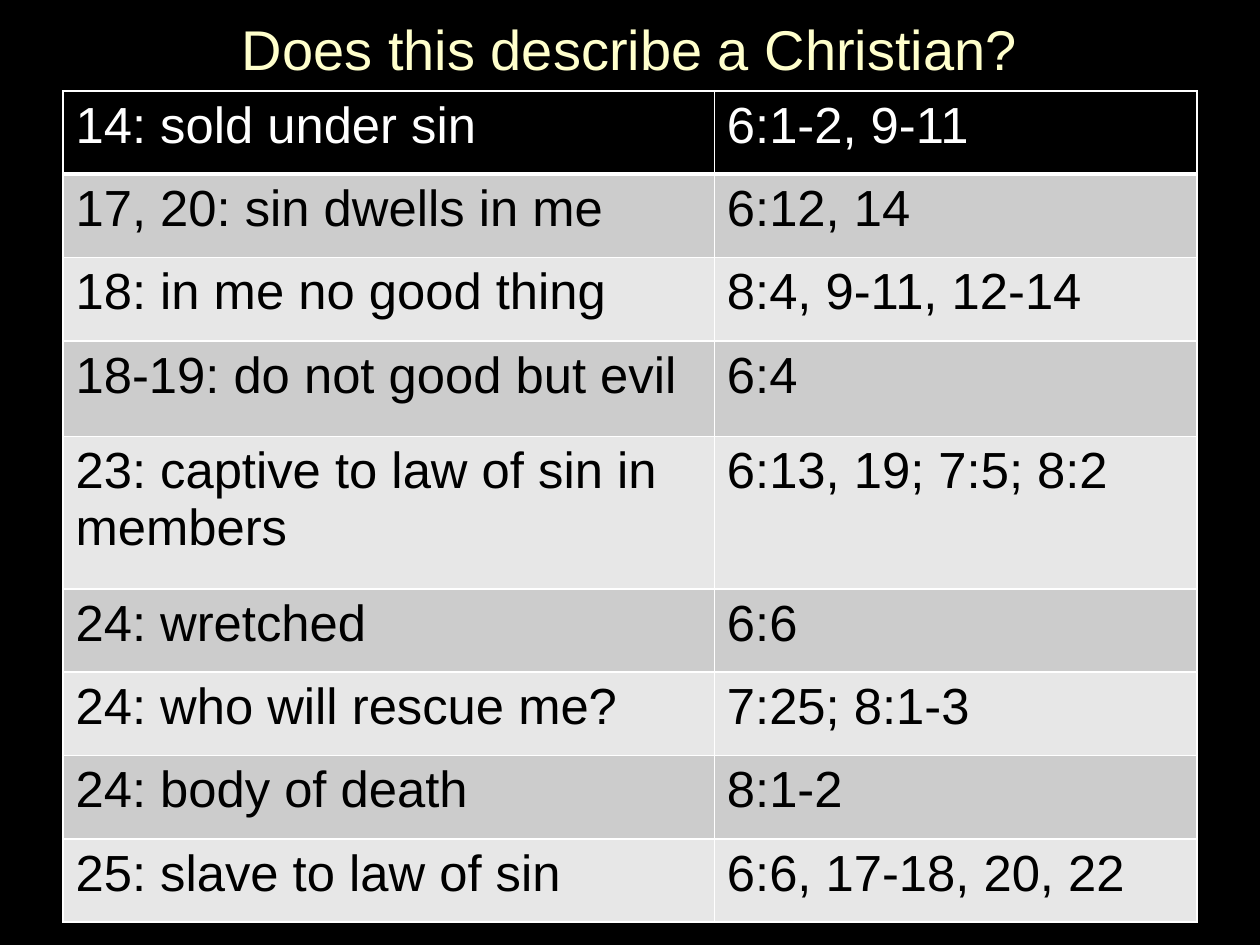
from dataclasses import dataclass
from typing import Any

import pptx
import pptx.dml.color
import pptx.enum.shapes
import pptx.enum.text
import pptx.oxml
import pptx.oxml.ns
import pptx.util

Cm = pptx.util.Cm
Pt = pptx.util.Pt


@dataclass(frozen=True)
class Theme:
    font: str = "Arial"
    title_size: float = 32
    cell_size: float = 29
    background: str = "000000"
    title: str = "FFFFCC"
    header_text: str = "FFFFFF"
    body_text: str = "000000"
    bands: tuple[str, str] = ("CCCCCC", "E7E7E7")
    border: str = "FFFFFF"
    thin: float = 1
    thick: float = 3


@dataclass(frozen=True)
class VerseRow:
    description: str
    references: str
    height: float = 1.68


THEME = Theme()
TITLE = "Does this describe a Christian?"
COLUMN_WIDTHS = (13.13, 9.73)
ROWS = (
    VerseRow("14: sold under sin", "6:1-2, 9-11"),
    VerseRow("17, 20: sin dwells in me", "6:12, 14"),
    VerseRow("18: in me no good thing", "8:4, 9-11, 12-14"),
    VerseRow("18-19: do not good but evil", "6:4", 1.93),
    VerseRow("23: captive to law of sin in members", "6:13, 19; 7:5; 8:2", 3.07),
    VerseRow("24: wretched", "6:6"),
    VerseRow("24: who will rescue me?", "7:25; 8:1-3"),
    VerseRow("24: body of death", "8:1-2"),
    VerseRow("25: slave to law of sin", "6:6, 17-18, 20, 22"),
)


def rgb(code: str) -> pptx.dml.color.RGBColor:
    return pptx.dml.color.RGBColor.from_string(code)


def set_solid(fill: Any, color: str) -> None:
    fill.solid()
    fill.fore_color.rgb = rgb(color)


def write(para: Any, text: str, size: float, color: str) -> None:
    span = para.add_run()
    span.text = text
    for name, value in {"name": THEME.font, "size": Pt(size), "bold": False}.items():
        setattr(span.font, name, value)
    span.font.color.rgb = rgb(color)


def set_borders(cell: Any, top: float, bottom: float) -> None:
    """Draw all four cell edges; the schema wants them ahead of the fill."""
    properties = cell._tc.get_or_add_tcPr()
    widths = {"lnL": THEME.thin, "lnR": THEME.thin, "lnT": top, "lnB": bottom}
    for position, (edge, width) in enumerate(widths.items()):
        line = pptx.oxml.parse_xml(
            f'<a:{edge} {pptx.oxml.ns.nsdecls("a")} w="{Pt(width)}">'
            f'<a:solidFill><a:srgbClr val="{THEME.border}"/></a:solidFill></a:{edge}>'
        )
        properties.insert(position, line)


def add_verse_table(page: Any) -> None:
    table = page.shapes.add_table(
        len(ROWS), len(COLUMN_WIDTHS), Cm(1.27), Cm(1.83),
        Cm(sum(COLUMN_WIDTHS)), Cm(sum(row.height for row in ROWS)),
    ).table
    for column, width in zip(table.columns, COLUMN_WIDTHS):
        column.width = Cm(width)
    for index, row in enumerate(ROWS):
        table.rows[index].height = Cm(row.height)
        header = index == 0
        fill = THEME.background if header else THEME.bands[(index - 1) % 2]
        color = THEME.header_text if header else THEME.body_text
        top = THEME.thick if index == 1 else THEME.thin
        bottom = THEME.thick if header else THEME.thin
        for cell, text in zip(table.rows[index].cells, (row.description, row.references)):
            set_solid(cell.fill, fill)
            set_borders(cell, top, bottom)
            write(cell.text_frame.paragraphs[0], text, THEME.cell_size, color)


def add_title(page: Any) -> None:
    box = page.shapes.add_shape(
        pptx.enum.shapes.MSO_SHAPE.RECTANGLE, Cm(3.81), Cm(0.23), Cm(17.78), Cm(1.47)
    )
    box.shadow.inherit = False
    set_solid(box.fill, THEME.background)
    set_solid(box.line.fill, THEME.background)
    box.line.width = Pt(THEME.thin)
    frame_format = {
        "word_wrap": True,
        "vertical_anchor": pptx.enum.text.MSO_ANCHOR.MIDDLE,
    }
    for name, value in frame_format.items():
        setattr(box.text_frame, name, value)
    para = box.text_frame.paragraphs[0]
    para.alignment = pptx.enum.text.PP_ALIGN.CENTER
    write(para, TITLE, THEME.title_size, THEME.title)


def main() -> None:
    deck = pptx.Presentation()
    deck.slide_width, deck.slide_height = Cm(25.4), Cm(19.05)
    page = deck.slides.add_slide(deck.slide_layouts[6])
    set_solid(page.background.fill, THEME.background)
    add_verse_table(page)
    add_title(page)
    deck.save("out.pptx")


if __name__ == "__main__":
    main()
